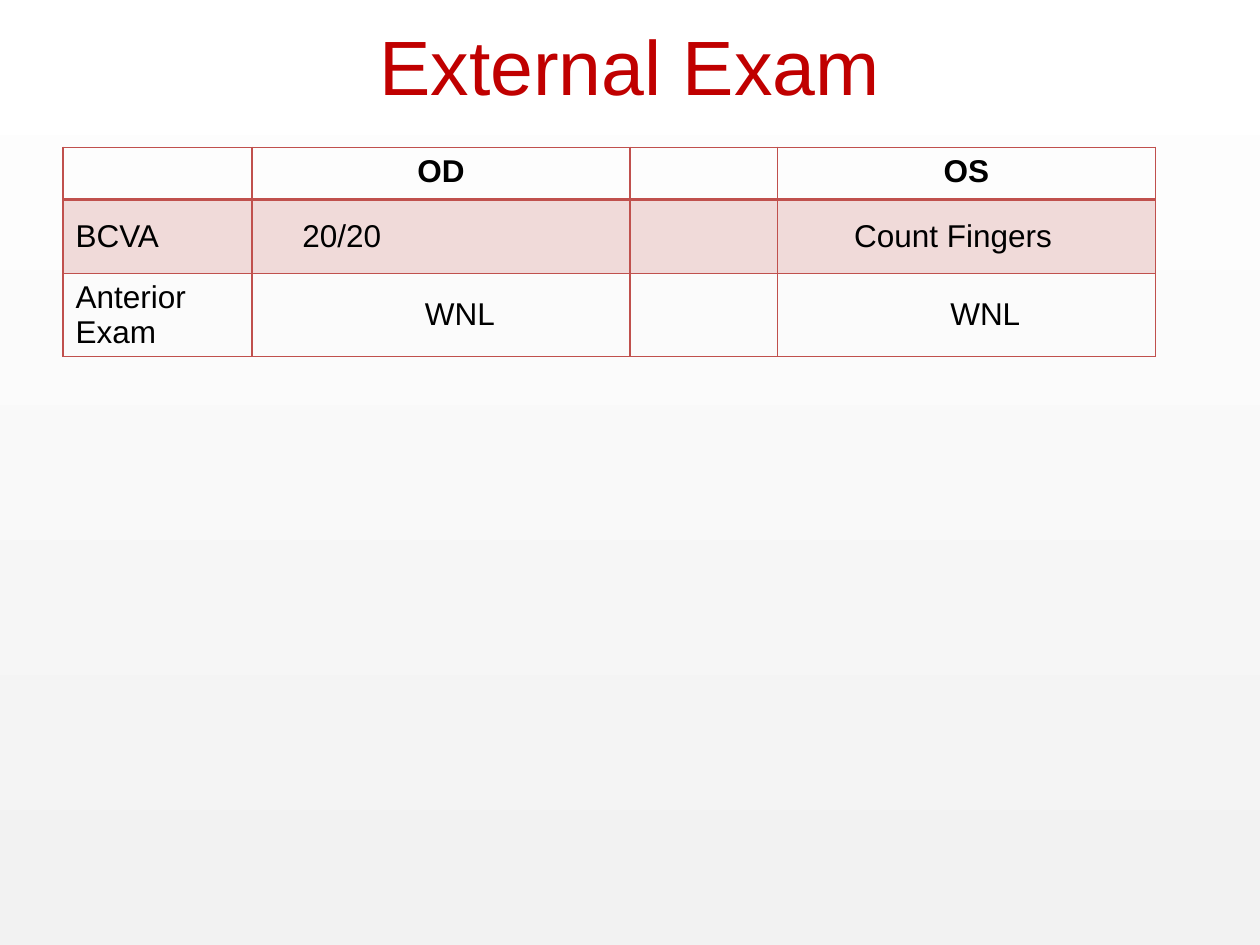
import pptx
import pptx.util
import pptx.dml.color
import pptx.enum.shapes
import pptx.enum.text
import pptx.oxml
import pptx.oxml.ns
import lxml.etree

Inches, Pt = pptx.util.Inches, pptx.util.Pt
Align, Anchor = pptx.enum.text.PP_ALIGN, pptx.enum.text.MSO_ANCHOR
qn = pptx.oxml.ns.qn
RED = "C0504D"
COLS = [1.5, 3, 1.17, 3]
ROWS = [0.41, 0.59, 0.58]
# Each cell: text, alignment, left inset
CELLS = [
    [("", "l", 0.1), ("OD", "c", 0.1), ("", "l", 0.1), ("OS", "c", 0.1)],
    [("BCVA", "l", 0.1), ("20/20", "l", 0.4), ("", "l", 0.1),
     ("Count Fingers", "l", 0.61)],
    [("Anterior Exam", "l", 0.1), ("WNL", "c", 0.4), ("", "l", 0.1),
     ("WNL", "c", 0.4)],
]


def color(code):
    return pptx.dml.color.RGBColor.from_string(code)


def write(para, text, size, code, bold=False, align="l"):
    para.alignment = Align.CENTER if align == "c" else Align.LEFT
    para.font.size = Pt(size)
    if text:
        run = para.add_run()
        run.text = text
        font = run.font
        font.name, font.size, font.bold = "Arial", Pt(size), bold
        font.color.rgb = color(code)


def back(slide, left, top, width, height):
    rect = slide.shapes.add_shape(
        pptx.enum.shapes.MSO_SHAPE.RECTANGLE,
        Inches(left), Inches(top), Inches(width), Inches(height))
    rect.shadow.inherit = False
    rect.line.fill.background()
    rect.fill.gradient()
    rect.fill.gradient_angle = 90
    for stop, code in zip(rect.fill.gradient_stops, ("F2F2F2", "FFFFFF")):
        stop.color.rgb = color(code)


def title(slide, left, top, width, height):
    box = slide.shapes.add_textbox(
        Inches(left), Inches(top), Inches(width), Inches(height))
    frame = box.text_frame
    frame.word_wrap = True
    frame.vertical_anchor = Anchor.MIDDLE
    write(frame.paragraphs[0], "External Exam", 44, "C00000", align="c")


def border(cell, side, width):
    props = cell._tc.get_or_add_tcPr()
    line = lxml.etree.SubElement(props, qn("a:ln" + side), w=str(Pt(width)))
    fill = lxml.etree.SubElement(line, qn("a:solidFill"))
    lxml.etree.SubElement(fill, qn("a:srgbClr"), val=RED)


def tint(cell, percent):
    cell.fill.solid()
    cell.fill.fore_color.rgb = color(RED)
    tone = cell._tc.tcPr.find(".//" + qn("a:solidFill") + "[last()]")
    tone = cell._tc.tcPr.findall(qn("a:solidFill"))[0][0]
    lxml.etree.SubElement(tone, qn("a:alpha"), val=str(percent * 1000))


def exam(slide, left, top):
    table = slide.shapes.add_table(
        len(ROWS), len(COLS), Inches(left), Inches(top),
        Inches(sum(COLS)), Inches(sum(ROWS))).table
    table.first_row = table.horz_banding = False
    for col, width in zip(table.columns, COLS):
        col.width = Inches(width)
    for r, height in enumerate(ROWS):
        table.rows[r].height = Inches(height)
        for c, (text, align, inset) in enumerate(CELLS[r]):
            cell = table.cell(r, c)
            cell.margin_left = Inches(inset)
            cell.vertical_anchor = Anchor.MIDDLE if r else Anchor.TOP
            widths = {"L": 1, "R": 1, "T": 2 if r == 1 else 1,
                      "B": 2 if r == 0 else 1}
            for side, width in widths.items():
                border(cell, side, width)
            if r == 1:
                tint(cell, 20)
            else:
                cell.fill.background()
            write(cell.text_frame.paragraphs[0], text, 18, "000000",
                  r == 0, align)


def main():
    deck = pptx.Presentation()
    deck.slide_width, deck.slide_height = Inches(10), Inches(7.5)
    slide = deck.slides.add_slide(deck.slide_layouts[6])
    back(slide, 0, 0, 10, 7.5)
    exam(slide, 0.5, 1.17)
    title(slide, 0.5, -0.11, 9, 1.25)
    deck.save("out.pptx")


if __name__ == "__main__":
    main()
